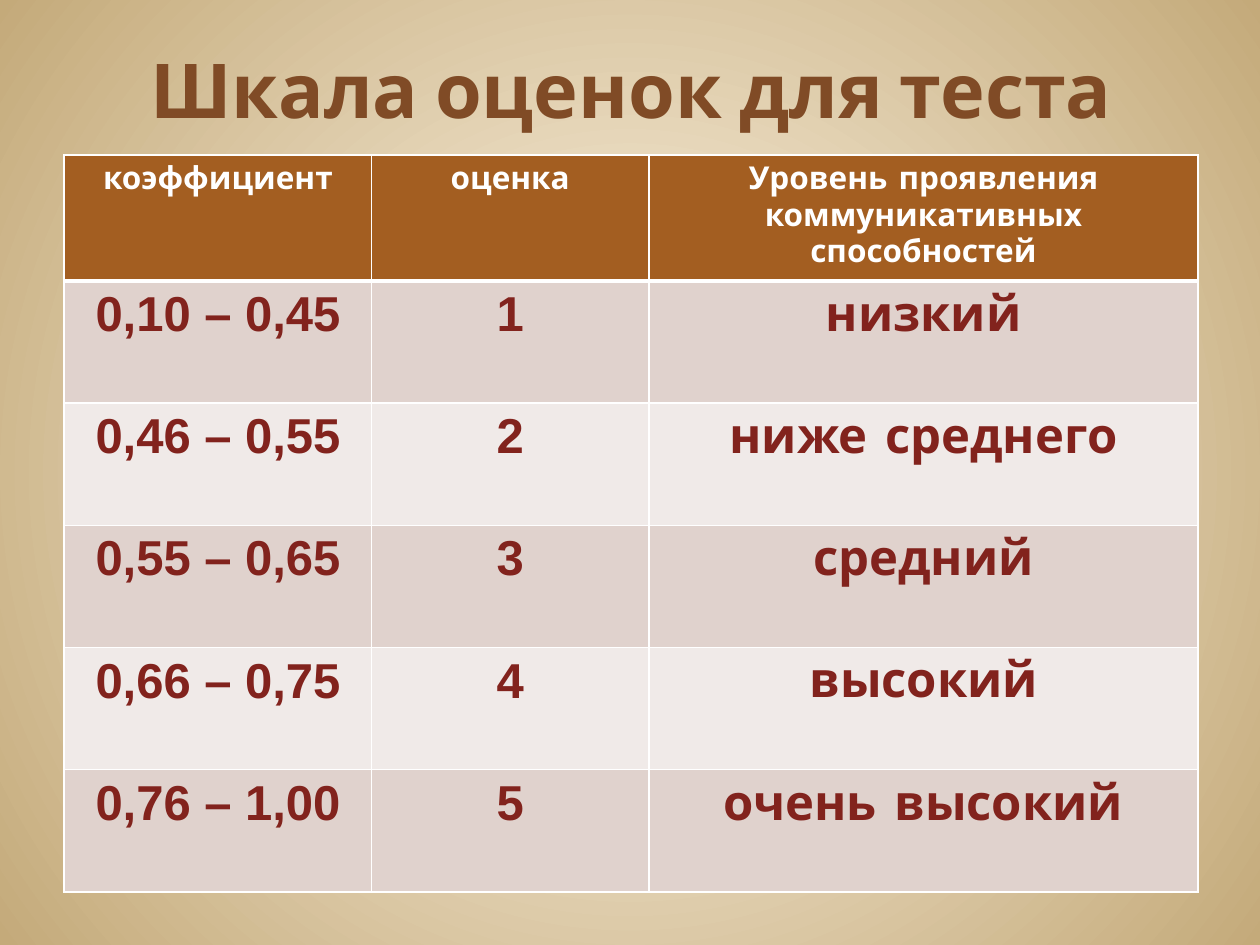
from dataclasses import dataclass

from lxml.etree import SubElement
from pptx import Presentation
from pptx.dml.color import RGBColor
from pptx.enum.text import MSO_ANCHOR, PP_ALIGN
from pptx.oxml import parse_xml
from pptx.oxml.ns import nsdecls, qn
from pptx.util import Inches, Pt

HEADINGS = ("коэффициент", "оценка", "Уровень проявления коммуникативных способностей")
LEVELS = (
    ("0,10 – 0,45", "низкий"),
    ("0,46 – 0,55", "ниже среднего"),
    ("0,55 – 0,65", "средний"),
    ("0,66 – 0,75", "высокий"),
    ("0,76 – 1,00", "очень высокий"),
)
COLUMN_WIDTHS = (2.44, 2.2, 4.36)
ROW_HEIGHT = 0.97
BAND_FILLS = ("E0D2CD", "F0EAE8")


@dataclass(frozen=True)
class TextStyle:
    font: str
    size: float
    color: str


TITLE = TextStyle("Cabin", 43.2, "804B26")
HEADING = TextStyle("Comic Neue", 18, "FFFFFF")
NUMBER = TextStyle("Arial", 28, "82231D")
LEVEL = TextStyle("Comic Neue", 28, "82231D")


def rgb(value: str) -> RGBColor:
    return RGBColor.from_string(value)


def write(frame, text: str, style: TextStyle) -> None:
    frame.text = text
    para = frame.paragraphs[0]
    para.alignment = PP_ALIGN.CENTER
    font = para.runs[0].font
    font.name, font.size, font.bold = style.font, Pt(style.size), True
    font.color.rgb = rgb(style.color)


def paint_background(page, center: str, edge: str) -> None:
    fill = page.background.fill
    fill.gradient()
    for stop, color in zip(fill.gradient_stops, (center, edge)):
        stop.color.rgb = rgb(color)
    gradient = page.element.find(".//" + qn("a:gradFill"))
    gradient.remove(gradient.find(qn("a:lin")))
    circle = SubElement(gradient, qn("a:path"), path="circle")
    SubElement(circle, qn("a:fillToRect"), l="50000", t="50000", r="50000", b="50000")


def set_borders(cell, widths: dict[str, float], color: str = "FFFFFF") -> None:
    properties = cell._tc.get_or_add_tcPr()
    for index, (side, width) in enumerate(widths.items()):
        properties.insert(index, parse_xml(
            f'<a:ln{side} {nsdecls("a")} w="{Pt(width)}"><a:solidFill>'
            f'<a:srgbClr val="{color}"/></a:solidFill></a:ln{side}>'))


def draw_cell(cell, text: str, style: TextStyle, fill: str, top: float, bottom: float) -> None:
    write(cell.text_frame, text, style)
    cell.fill.solid()
    cell.fill.fore_color.rgb = rgb(fill)
    set_borders(cell, {"L": 1, "R": 1, "T": top, "B": bottom})


def draw_title(page, text: str) -> None:
    box = page.shapes.add_textbox(Inches(0.51), Inches(0.21), Inches(9), Inches(0.9))
    box.text_frame.word_wrap = True
    box.text_frame.vertical_anchor = MSO_ANCHOR.BOTTOM
    write(box.text_frame, text, TITLE)


def draw_scale(page) -> None:
    row_count = len(LEVELS) + 1
    table = page.shapes.add_table(
        row_count, len(HEADINGS), Inches(0.51), Inches(1.23),
        Inches(sum(COLUMN_WIDTHS)), Inches(ROW_HEIGHT * row_count)).table
    for column, width in zip(table.columns, COLUMN_WIDTHS):
        column.width = Inches(width)
    for row in table.rows:
        row.height = Inches(ROW_HEIGHT)
    for column, heading in enumerate(HEADINGS):
        draw_cell(table.cell(0, column), heading, HEADING, "A35E21", 1, 3)
    for grade, (interval, level) in enumerate(LEVELS, start=1):
        fill = BAND_FILLS[(grade - 1) % 2]
        top = 3 if grade == 1 else 1
        entries = ((interval, NUMBER), (str(grade), NUMBER), (level, LEVEL))
        for column, (text, style) in enumerate(entries):
            draw_cell(table.cell(grade, column), text, style, fill, top, 1)


def main() -> None:
    """Build the slide with the grading scale for the test."""
    deck = Presentation()
    deck.slide_width, deck.slide_height = Inches(10), Inches(7.5)
    page = deck.slides.add_slide(deck.slide_layouts[6])
    paint_background(page, "FFF7E8", "C4AA7A")
    draw_title(page, "Шкала оценок для теста")
    draw_scale(page)
    deck.save("out.pptx")


if __name__ == "__main__":
    main()
